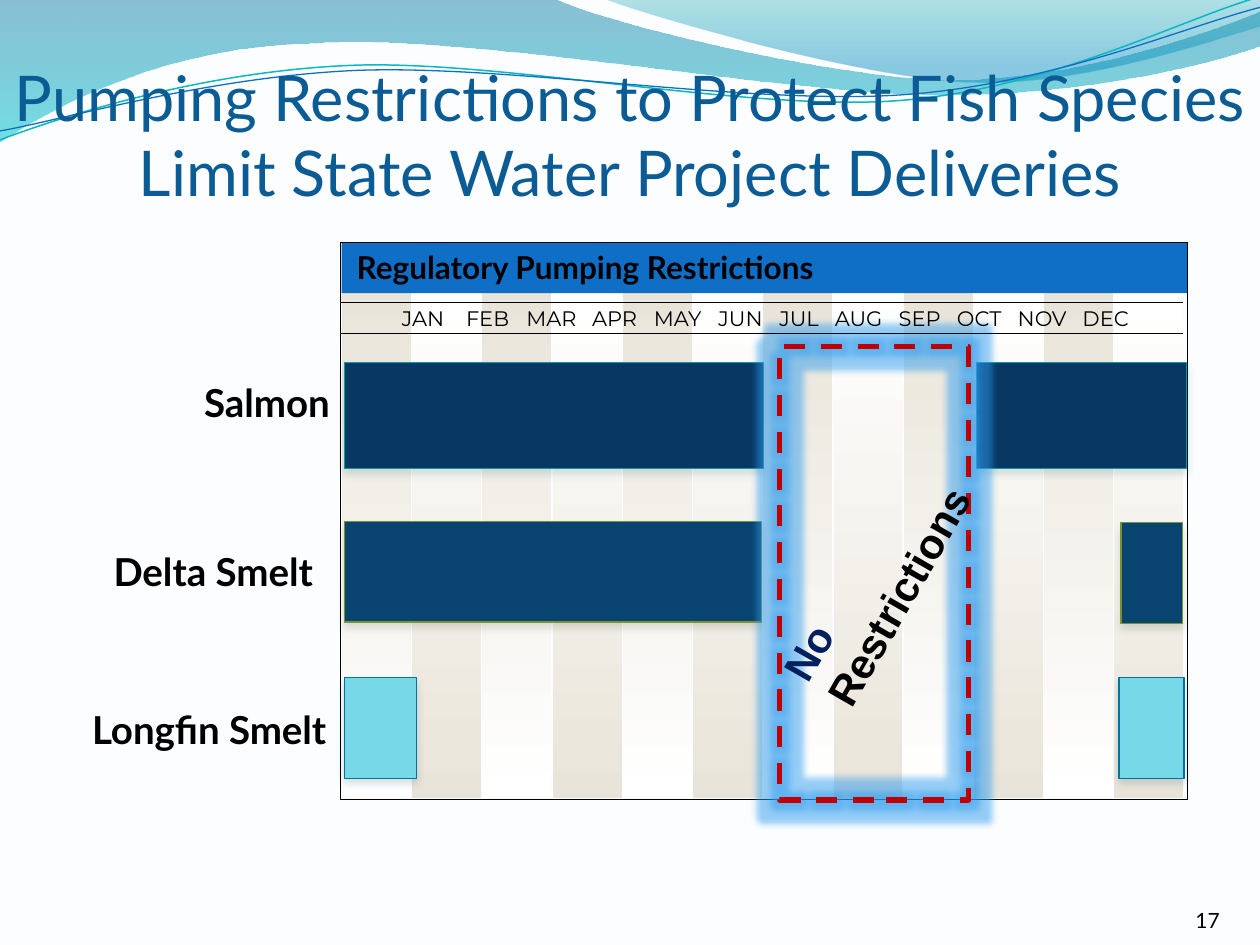
import lxml.etree
import pptx
import pptx.dml.color
import pptx.enum.dml
import pptx.enum.shapes
import pptx.enum.text
import pptx.oxml.ns
import pptx.util

Cm = pptx.util.Cm
Pt = pptx.util.Pt
RGBColor = pptx.dml.color.RGBColor
qn = pptx.oxml.ns.qn
SubElement = lxml.etree.SubElement
RECTANGLE = pptx.enum.shapes.MSO_SHAPE.RECTANGLE
STRAIGHT = pptx.enum.shapes.MSO_CONNECTOR.STRAIGHT
ALIGN = pptx.enum.text.PP_ALIGN
ANCHOR = pptx.enum.text.MSO_ANCHOR

PAPER = RGBColor(0xFB, 0xFD, 0xFF)
WHITE = RGBColor(0xFF, 0xFF, 0xFF)
BLACK = RGBColor(0x00, 0x00, 0x00)
SAND = RGBColor(0xE9, 0xE4, 0xD9)
BLUE = RGBColor(0x0F, 0x6F, 0xC6)
TITLE_BLUE = RGBColor(0x0B, 0x5B, 0x94)
NAVY = RGBColor(0x00, 0x20, 0x60)
RED = RGBColor(0xC0, 0x00, 0x00)
GLOW = RGBColor(0x2D, 0x9B, 0xEE)
OCEAN = RGBColor(0x00, 0x74, 0xA1)
AQUA = RGBColor(0x00, 0xC6, 0xCF)
TEAL = RGBColor(0x00, 0xA1, 0xA9)
SKY = RGBColor(0x00, 0x8B, 0xBF)
TURQUOISE = RGBColor(0x0A, 0xB8, 0xBF)
SALMON_FILL = RGBColor(0x08, 0x37, 0x63)
SALMON_LINE = RGBColor(0x06, 0x9C, 0xA3)
SALMON_SHADOW = RGBColor(0x02, 0x4B, 0x4E)
DELTA_FILL = RGBColor(0x08, 0x44, 0x6F)
DELTA_LINE = RGBColor(0x7B, 0x91, 0x35)
DELTA_SHADOW = RGBColor(0x3A, 0x45, 0x19)
LONGFIN_FILL = RGBColor(0x77, 0xD9, 0xE8)
LONGFIN_SHADOW = RGBColor(0x00, 0x37, 0x4C)


def fill_gradient(shape, stops):
    shape.fill.gradient()
    shape.fill.gradient_angle = 270
    for stop, (position, color, opacity) in zip(shape.fill.gradient_stops, stops):
        stop.position = position
        stop.color.rgb = color
    tints = shape.element.spPr.find(qn("a:gradFill")).iter(qn("a:srgbClr"))
    for tint, (position, color, opacity) in zip(tints, stops):
        if opacity < 100:
            SubElement(tint, qn("a:alpha"), val=str(opacity * 1000))


def write(box, lines, font, frame_format, para_format):
    frame = box.text_frame
    for name, value in {"word_wrap": True, **frame_format}.items():
        setattr(frame, name, value)
    for index, (text, color) in enumerate(lines):
        para = frame.add_paragraph() if index else frame.paragraphs[0]
        for name, value in para_format.items():
            setattr(para, name, value)
        span = para.add_run()
        span.text = text
        for name, value in font.items():
            setattr(span.font, name, value)
        span.font.color.rgb = color


deck = pptx.Presentation()
deck.slide_width, deck.slide_height = Cm(25.4), Cm(19.05)
page = deck.slides.add_slide(deck.slide_layouts[5])
page.background.fill.solid()
page.background.fill.fore_color.rgb = PAPER
shapes = page.shapes
no_inset = {f"margin_{side}": 0 for side in ("left", "top", "right", "bottom")}

waves = [
    ([(0, 0)], [(11.18, -0.03)],
     [(12.09, 0.43), (16.87, 1.6), (19.25, 1.6)],
     [(21.67, 1.6), (24.33, 0.66), (25.4, 0.23)], [(25.43, 0.91)],
     [(24.97, 1.12), (22.1, 1.93), (18.95, 1.91)],
     [(15.8, 1.91), (9.7, 0.71), (6.53, 0.86)],
     [(3.28, 0.91), (1.17, 2.11), (-0.03, 2.87)]),
    ([(12.17, -0.03)],
     [(12.93, 0.28), (17.32, 1.57), (19.53, 1.65)],
     [(21.74, 1.75), (24.41, 0.81), (25.4, 0.53)], [(25.4, 0)]),
    ([(0, 2.82)],
     [(1.22, 2.36), (4.01, 1.45), (7.04, 1.32)],
     [(10.03, 1.19), (15.06, 2.26), (18.11, 2.03)],
     [(21.16, 1.8), (23.83, 0.38), (25.35, -0.05)]),
    ([(0, 2.64)],
     [(1.19, 2.44), (4.17, 1.55), (7.19, 1.42)],
     [(10.24, 1.3), (15.16, 2.13), (18.21, 1.91)],
     [(21.23, 1.7), (23.9, 0.53), (25.4, 0.15)]),
]
wave_styles = [
    ([(0, OCEAN, 45), (1, AQUA, 55)], None, 0),
    ([(0, TEAL, 30), (0.8, SKY, 45)], None, 0),
    (None, TURQUOISE, 0.85),
    (None, BLUE, 0.75),
]
for pieces, (stops, line_color, line_width) in zip(waves, wave_styles):
    ends = [(Cm(piece[-1][0]), Cm(piece[-1][1])) for piece in pieces]
    builder = shapes.build_freeform(*ends[0])
    builder.add_line_segments(ends[1:], close=stops is not None)
    wave = builder.convert_to_shape()
    segments = list(wave.element.spPr.iter(qn("a:lnTo")))
    for segment, piece in zip(segments, pieces[1:]):
        if len(piece) == 3:
            curve = lxml.etree.Element(qn("a:cubicBezTo"))
            for x, y in piece:
                SubElement(curve, qn("a:pt"), x=str(Cm(x) - wave.left), y=str(Cm(y) - wave.top))
            segment.getparent().replace(segment, curve)
    wave.shadow.inherit = False
    if stops:
        fill_gradient(wave, stops)
        wave.line.fill.background()
    else:
        wave.fill.background()
        wave.line.color.rgb = line_color
        wave.line.width = Pt(line_width)

stripe_width = 16.99 / 12
for month in range(12):
    stripe = shapes.add_shape(RECTANGLE, Cm(6.88 + month * stripe_width), Cm(5.89),
                              Cm(stripe_width), Cm(10.21))
    stripe.shadow.inherit = False
    top, bottom = (WHITE, SAND) if month % 2 else (SAND, WHITE)
    fill_gradient(stripe, [(0, top, 100), (1, bottom, 100)])
    stripe.line.color.rgb = PAPER
    stripe.line.width = Pt(0.75)

rectangles = [
    (6.87, 4.89, 17.06, 11.22, None, BLACK, 0.5, None),
    (6.89, 4.9, 17.04, 1.01, BLUE, None, 0, None),
    (6.94, 10.51, 8.41, 2.03, DELTA_FILL, DELTA_LINE, 0.75, DELTA_SHADOW),
    (22.6, 10.54, 1.24, 2.03, DELTA_FILL, DELTA_LINE, 0.75, DELTA_SHADOW),
    (19.68, 7.31, 4.24, 2.13, SALMON_FILL, SALMON_LINE, 0.75, SALMON_SHADOW),
    (6.94, 7.31, 8.46, 2.13, SALMON_FILL, SALMON_LINE, 0.75, SALMON_SHADOW),
    (22.56, 13.66, 1.31, 2.03, LONGFIN_FILL, OCEAN, 0.75, LONGFIN_SHADOW),
    (6.94, 13.66, 1.46, 2.03, LONGFIN_FILL, OCEAN, 0.75, LONGFIN_SHADOW),
    (15.72, 6.99, 3.81, 9.14, None, RED, 3, None),
]
for left, top, width, height, fill, line, line_width, shadow in rectangles:
    box = shapes.add_shape(RECTANGLE, Cm(left), Cm(top), Cm(width), Cm(height))
    box.shadow.inherit = False
    if fill:
        box.fill.solid()
        box.fill.fore_color.rgb = fill
    else:
        box.fill.background()
    if line:
        box.line.color.rgb = line
        box.line.width = Pt(line_width)
    else:
        box.line.fill.background()
    if shadow:
        effect = SubElement(box.element.spPr.find(qn("a:effectLst")), qn("a:outerShdw"),
                            blurRad=str(Pt(4.5)), dist=str(Pt(3)), dir="5400000", rotWithShape="0")
        SubElement(SubElement(effect, qn("a:srgbClr"), val=str(shadow)), qn("a:alpha"), val="15000")
open_window = box
open_window.line.dash_style = pptx.enum.dml.MSO_LINE.DASH
glow = SubElement(open_window.element.spPr.find(qn("a:effectLst")), qn("a:glow"), rad=str(Pt(8)))
SubElement(SubElement(glow, qn("a:srgbClr"), val=str(GLOW)), qn("a:alpha"), val="50000")

for height in (6.1, 6.73):
    rule = shapes.add_connector(STRAIGHT, Cm(6.88), Cm(height), Cm(23.85), Cm(height))
    rule.line.color.rgb = BLACK
    rule.line.width = Pt(0.75)
    SubElement(rule.element.spPr, qn("a:effectLst"))

month_centers = {"JAN": 1.72, "FEB": 3.02, "MAR": 4.31, "APR": 5.58, "MAY": 6.85, "JUN": 8.12,
                 "JUL": 9.3, "AUG": 10.5, "SEP": 11.73, "OCT": 12.93, "NOV": 14.2, "DEC": 15.48}
month_box = shapes.add_textbox(Cm(6.81), Cm(6.24), Cm(17.27), Cm(0.43))
month_tabs = SubElement(month_box.text_frame.paragraphs[0]._p.get_or_add_pPr(), qn("a:tabLst"))
for center in month_centers.values():
    SubElement(month_tabs, qn("a:tab"), pos=str(Cm(center)), algn="ctr")
write(month_box, [("\t" + "\t".join(month_centers), BLACK)],
      {"name": "Montserrat", "size": Pt(12)},
      {"vertical_anchor": ANCHOR.MIDDLE, **no_inset}, {"line_spacing": 0.85})

for name, right, top in (("Delta Smelt", 6.56, 11.07), ("Salmon", 6.9, 7.67),
                         ("Longfin Smelt", 6.83, 14.27)):
    label = shapes.add_textbox(Cm(right - 6.5), Cm(top), Cm(6.5), Cm(1.02))
    write(label, [(name, BLACK)], {"name": "Lato", "size": Pt(22), "bold": True},
          {"vertical_anchor": ANCHOR.MIDDLE}, {"alignment": ALIGN.RIGHT, "line_spacing": 0.85})

note = shapes.add_textbox(Cm(14.78), Cm(10.29), Cm(6.15), Cm(2.31))
note.rotation = 299.9
write(note, [("No", NAVY), ("Restrictions", BLACK)],
      {"name": "Arial", "size": Pt(24), "bold": True}, {}, {})

header = shapes.add_textbox(Cm(6.94), Cm(4.88), Cm(17.07), Cm(1.02))
write(header, [("Regulatory Pumping Restrictions", BLACK)],
      {"name": "Lato", "size": Pt(18), "bold": True}, {}, {})

number = shapes.add_textbox(Cm(23.29), Cm(18.03), Cm(2.11), Cm(1.02))
write(number, [("17", BLACK)], {"name": "Lato", "size": Pt(12)},
      {"vertical_anchor": ANCHOR.MIDDLE, **no_inset}, {"alignment": ALIGN.CENTER})

title = shapes.title
title.left, title.top, title.width, title.height = Cm(0), Cm(1.04), Cm(25.4), Cm(3.18)
write(title, [("Pumping Restrictions to Protect Fish Species Limit State Water Project Deliveries",
               TITLE_BLUE)], {"name": "Lato", "size": Pt(36)},
      {"vertical_anchor": ANCHOR.BOTTOM, "auto_size": pptx.enum.text.MSO_AUTO_SIZE.NONE,
       **no_inset}, {"alignment": ALIGN.CENTER})
title.element.getparent().append(title.element)

deck.save("out.pptx")
